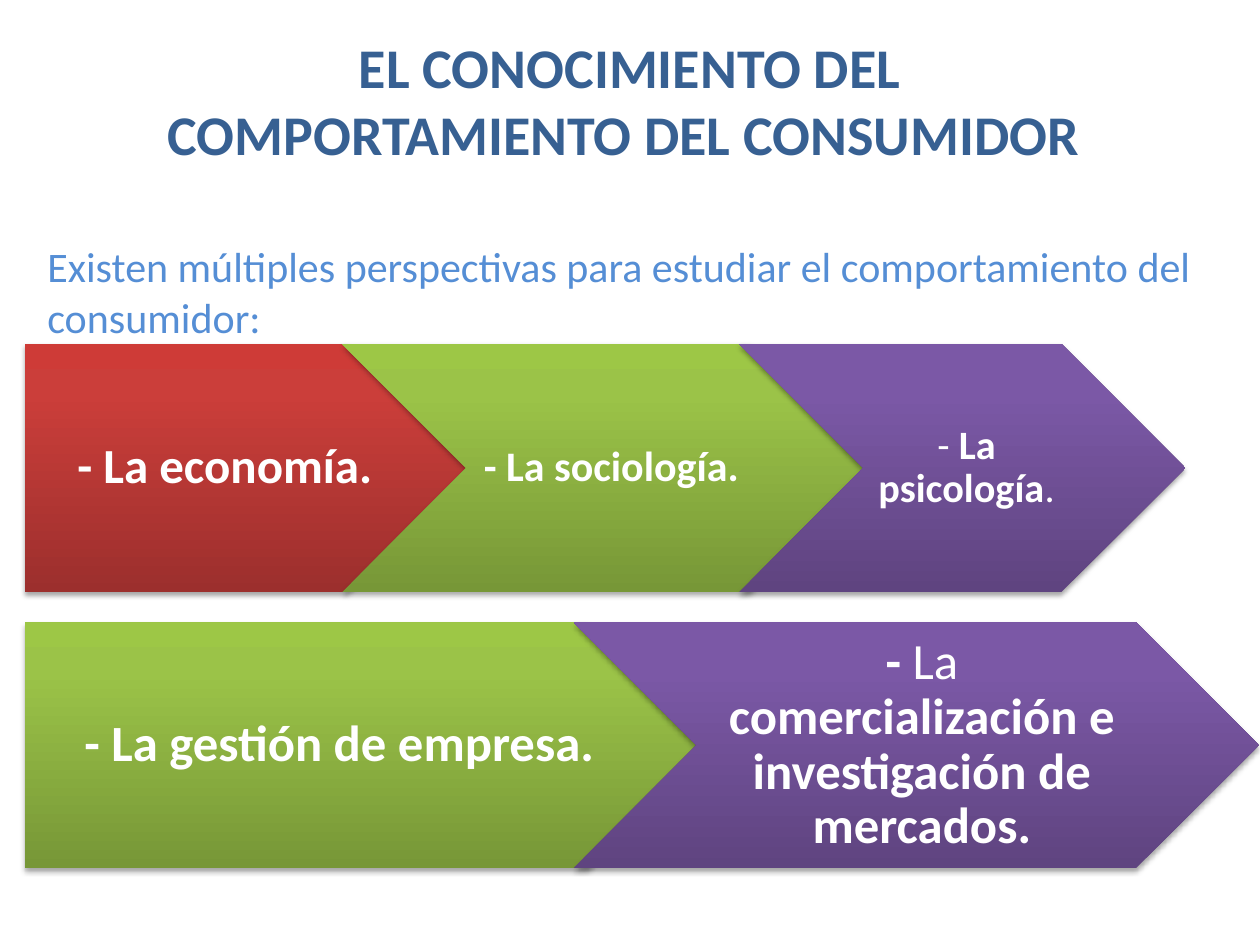
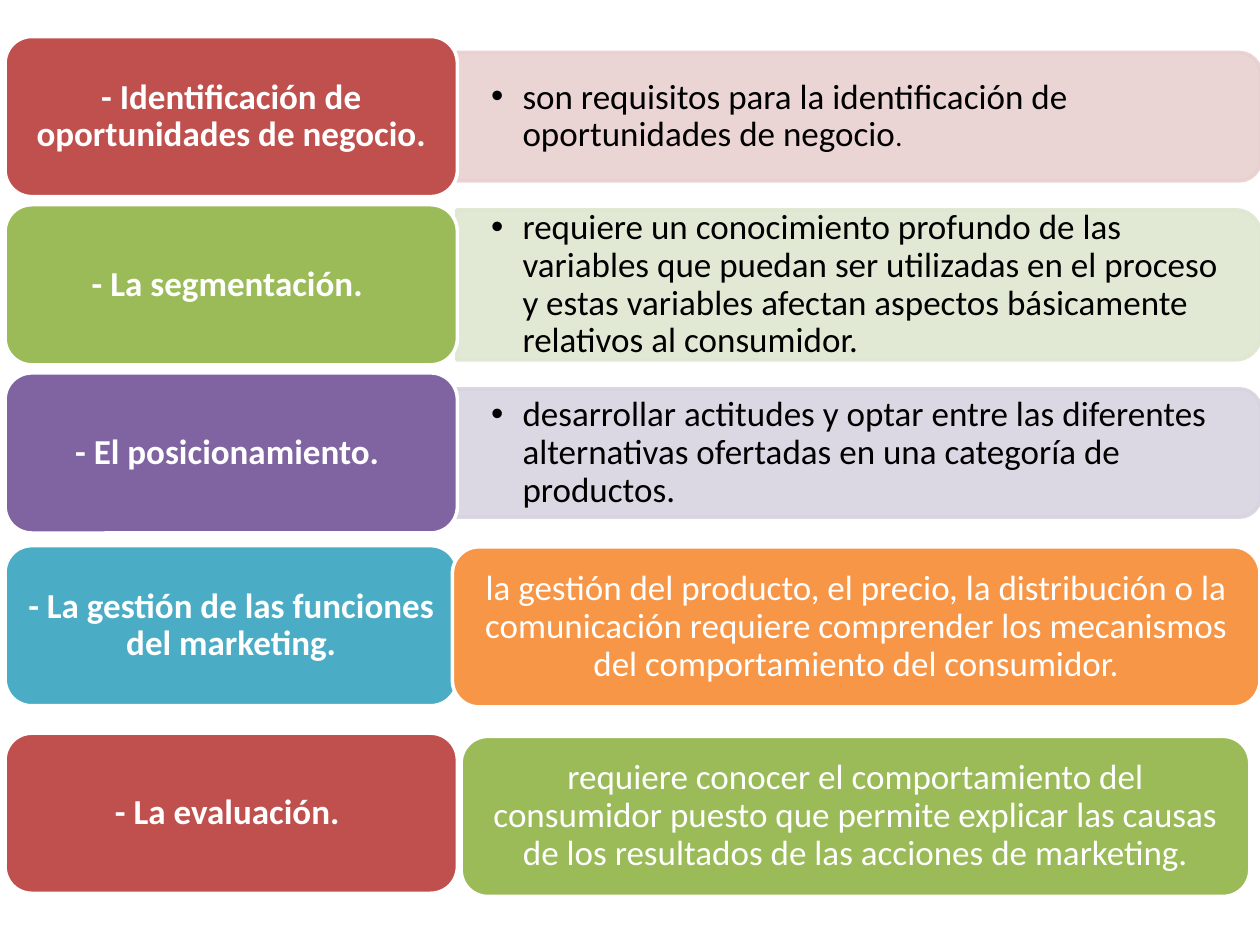
from copy import deepcopy

from lxml.etree import SubElement
from pptx import Presentation
from pptx.dml.color import RGBColor
from pptx.enum.shapes import MSO_SHAPE
from pptx.enum.text import MSO_ANCHOR, MSO_AUTO_SIZE, PP_ALIGN
from pptx.oxml.ns import qn
from pptx.util import Pt

# Shared style
FONT = "Calibri"
WHITE, BLACK = "FFFFFF", "000000"
RED, GREEN, PURPLE = "C0504D", "9BBB59", "8064A2"
AQUA, ORANGE = "4BACC6", "F79646"
GRADIENT_POSITIONS = (0, 0.8, 1)
RED_GRADIENT = ("9C2F2D", "CB3E3A", "CE3B37")
GREEN_GRADIENT = ("779737", "9BC348", "9DC746")
PURPLE_GRADIENT = ("5F4480", "7B58A6", "7C57A8")

# Rows of the second slide
CARD_LEFT, CARD_WIDTH, CARD_HEIGHT = 2.9, 258.5, 91.5
FIRST_TOP, ROW_PITCH = 20.9, 96.1
BAR_LEFT, BAR_WIDTH = 261, 459.4


def color(value):
    return RGBColor.from_string(value)


def set_values(target, values):
    for name, value in values.items():
        setattr(target, name, value)


def points(*lengths):
    return [Pt(length) for length in lengths]


def write_text(shape, runs, size, text_color, margins, align=PP_ALIGN.CENTER,
               anchor=MSO_ANCHOR.MIDDLE, line_spacing=0.9, bullet=False):
    """Write one paragraph; runs are (text, bold) pairs or (text, bold, size)."""
    left, top, right, bottom = points(*margins)
    frame = shape.text_frame
    set_values(frame, {
        "word_wrap": True, "auto_size": MSO_AUTO_SIZE.NONE,
        "vertical_anchor": anchor, "margin_left": left, "margin_top": top,
        "margin_right": right, "margin_bottom": bottom})
    paragraph = frame.paragraphs[0]
    set_values(paragraph, {"alignment": align, "line_spacing": line_spacing})
    if bullet:
        properties = paragraph._p.get_or_add_pPr()
        properties.set("marL", str(Pt(18)))
        properties.set("indent", str(Pt(-18)))
        SubElement(properties, qn("a:buFont"), typeface="Arial")
        SubElement(properties, qn("a:buChar"), char="•")
    for text, bold, *own_size in runs:
        run = paragraph.add_run()
        run.text = text
        set_values(run.font, {"name": FONT, "bold": bold,
                              "size": Pt(own_size[0] if own_size else size)})
        run.font.color.rgb = color(text_color)


def add_filled_shape(slide, kind, box, fill_color, line_color):
    shape = slide.shapes.add_shape(kind, *points(*box))
    shape.shadow.inherit = False
    shape.fill.solid()
    shape.fill.fore_color.rgb = color(fill_color)
    shape.line.color.rgb = color(line_color)
    shape.line.width = Pt(2)
    return shape


def add_arrow(slide, kind, box, gradient, runs, size, margins):
    shape = slide.shapes.add_shape(kind, *points(*box))
    shape.line.fill.background()
    # Three-stop gradient that runs upwards
    shape.fill.gradient()
    shape.fill.gradient_angle = 90
    stop_list = shape._element.spPr.find(".//" + qn("a:gsLst"))
    stop_list.insert(1, deepcopy(stop_list[0]))
    for stop, position, value in zip(shape.fill.gradient_stops,
                                     GRADIENT_POSITIONS, gradient):
        stop.position = position
        stop.color.rgb = color(value)
    # Soft shadow below
    shape.shadow.inherit = False
    effects = shape._element.spPr.find(qn("a:effectLst"))
    shadow = SubElement(effects, qn("a:outerShdw"), blurRad=str(Pt(3.1)),
                        dist=str(Pt(1.8)), dir="5400000", rotWithShape="0")
    shadow_color = SubElement(shadow, qn("a:srgbClr"), val=BLACK)
    SubElement(shadow_color, qn("a:alpha"), val="35000")
    write_text(shape, runs, size, WHITE, margins)


def add_card(slide, left, top, width, fill_color, text, bold=False):
    card = add_filled_shape(slide, MSO_SHAPE.ROUNDED_RECTANGLE,
                            (left, top, width, CARD_HEIGHT), fill_color, WHITE)
    write_text(card, [(text, bold)], 20, WHITE, (6, 3, 6, 3))


def add_bar(slide, center, height, fill_color, runs):
    """Pale bar with rounded right corners and a bulleted text."""
    middle = BAR_LEFT + BAR_WIDTH / 2
    box = (middle - height / 2, center - BAR_WIDTH / 2, height, BAR_WIDTH)
    bar = add_filled_shape(slide, MSO_SHAPE.ROUND_2_SAME_RECTANGLE, box,
                           fill_color, fill_color)
    bar.rotation = 90
    for bar_color in bar._element.spPr.iter(qn("a:srgbClr")):
        SubElement(bar_color, qn("a:alpha"), val="90000")
    text_height = height - 7.5
    label = slide.shapes.add_textbox(*points(
        BAR_LEFT, center - text_height / 2, BAR_WIDTH - 4, text_height))
    write_text(label, runs, 20, BLACK, (19.6, 10, 19.6, 10),
               align=PP_ALIGN.LEFT, bullet=True)


def build_perspectives(presentation):
    slide = presentation.slides.add_slide(presentation.slide_layouts[5])
    title = slide.shapes.title
    left, top, width, height = points(87.8, 15.1, 544.3, 106.6)
    set_values(title, {"left": left, "top": top, "width": width, "height": height})
    write_text(title, [("EL CONOCIMIENTO DEL COMPORTAMIENTO DEL CONSUMIDOR ", True)],
               32, "376092", (7.2, 3.6, 7.2, 3.6), anchor=MSO_ANCHOR.TOP,
               line_spacing=1.0)

    # Upper and lower rows of arrows
    pentagon, chevron = MSO_SHAPE.PENTAGON, MSO_SHAPE.CHEVRON
    upper, upper_height = 196.6, 141.6
    lower, lower_height = 355.6, 140.4
    arrows = [
        (pentagon, (14.4, upper, 254.9, upper_height), RED_GRADIENT,
         [("- La economía.", True)], 28, (11.5, 5.8, 2.9, 5.8)),
        (chevron, (195.7, upper, 303.1, upper_height), GREEN_GRADIENT,
         [("- La sociología.", True)], 24, (7.2, 5, 2.9, 5)),
        (chevron, (422.5, upper, 254.9, upper_height), PURPLE_GRADIENT,
         [("- ", False), ("La psicología", True), (".", False)],
         23, (7.2, 5, 2.2, 5)),
        (pentagon, (14.4, lower, 391.7, lower_height), GREEN_GRADIENT,
         [("- La gestión de empresa. ", True)], 29, (12.2, 5.8, 2.9, 5.8)),
        (chevron, (327.8, lower, 391.7, lower_height), PURPLE_GRADIENT,
         [("-", True), (" La ", False),
          ("comercialización e investigación de mercados.", True)],
         29, (9.4, 5.8, 2.9, 5.8)),
    ]
    for arrow in arrows:
        add_arrow(slide, *arrow)

    # Introduction
    intro = slide.shapes.add_textbox(*points(20, 134, 674.6, 64))
    write_text(intro, [("Existen múltiples perspectivas para estudiar el "
                        "comportamiento del consumidor:", False)],
               24, "558ED5", (7.2, 3.6, 7.2, 3.6), align=PP_ALIGN.LEFT,
               anchor=MSO_ANCHOR.TOP, line_spacing=1.0)


def build_applications(presentation):
    slide = presentation.slides.add_slide(presentation.slide_layouts[6])

    # Cards with a pale bar beside them
    rows = [
        ("- Identificación de oportunidades de negocio.", RED, "E8D0D0", 73.4,
         [("son requisitos para la identificación de oportunidades de negocio", False),
          (".", False, 16)]),
        ("- La segmentación. ", GREEN, "DEE7D1", 85.7,
         [("requiere un conocimiento profundo de las variables que puedan ser "
           "utilizadas en el proceso y estas variables afectan aspectos "
           "básicamente relativos al consumidor.", False)]),
        ("- El posicionamiento. ", PURPLE, "D8D3E0", 73.4,
         [("desarrollar actitudes y optar entre las diferentes alternativas "
           "ofertadas en una categoría de productos.", False)]),
    ]
    for index, (heading, fill_color, pale, bar_height, runs) in enumerate(rows):
        top = FIRST_TOP + index * ROW_PITCH
        add_bar(slide, top + CARD_HEIGHT / 2, bar_height, pale, runs)
        add_card(slide, CARD_LEFT, top, CARD_WIDTH, fill_color, heading, True)

    # Pairs of cards
    pairs = [
        (311.8, "- La gestión de las funciones del marketing.", AQUA,
         (258.5, 312.5, 461.5), ORANGE,
         "la gestión del producto, el precio, la distribución o la comunicación "
         "requiere comprender los mecanismos del comportamiento del consumidor."),
        (419, "- La evaluación. ", RED, (263.5, 420.8, 450.7), GREEN,
         "requiere conocer el comportamiento del consumidor puesto que permite "
         "explicar las causas de los resultados de las acciones de marketing."),
    ]
    for top, heading, fill_color, detail_box, detail_color, detail in pairs:
        add_card(slide, CARD_LEFT, top, CARD_WIDTH, fill_color, heading, True)
        add_card(slide, *detail_box, detail_color, detail)


def main():
    presentation = Presentation()
    set_values(presentation, {"slide_width": Pt(720), "slide_height": Pt(540)})
    build_perspectives(presentation)
    build_applications(presentation)
    presentation.save("out.pptx")


if __name__ == "__main__":
    main()
